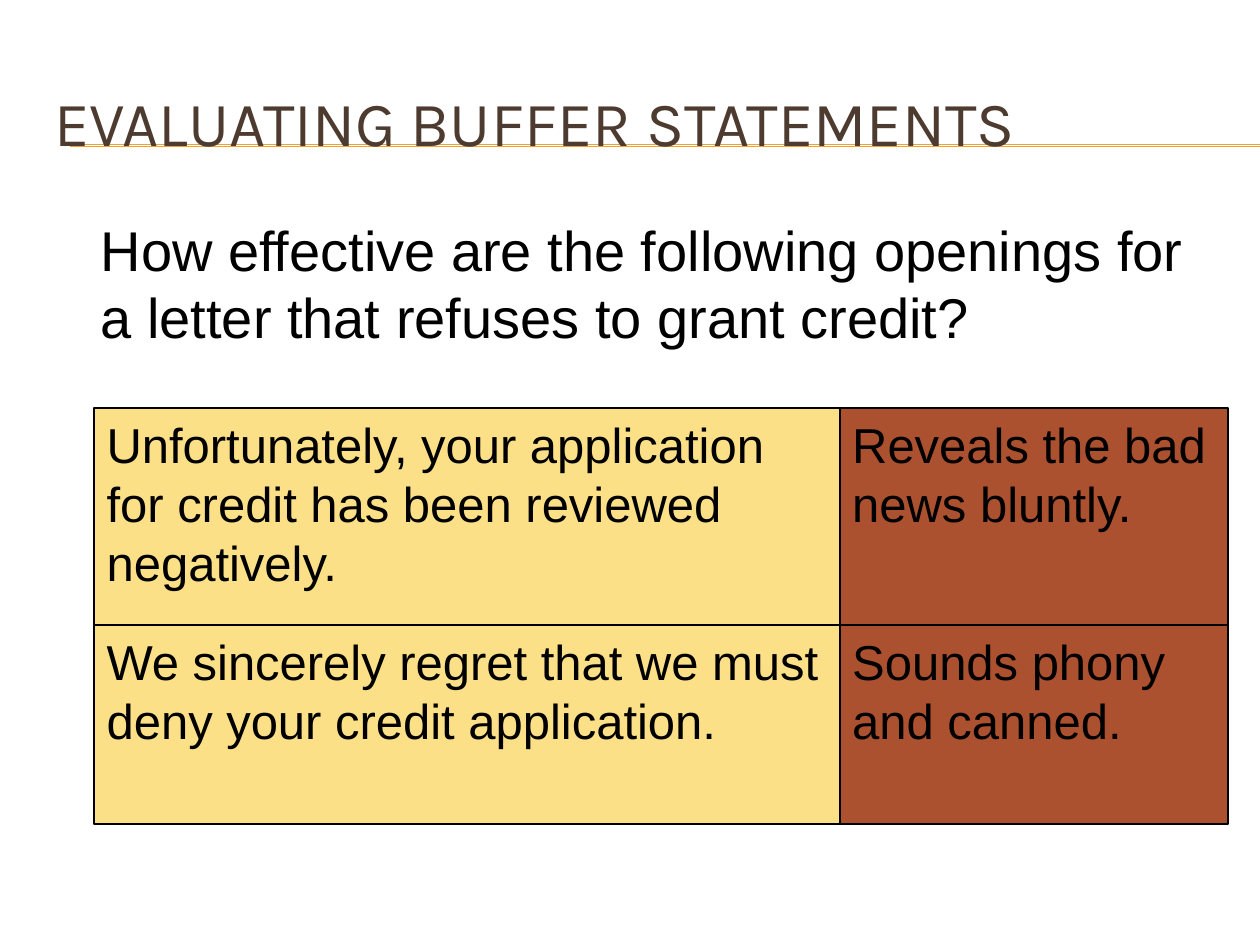
from pptx import Presentation
from pptx.dml.color import RGBColor
from pptx.enum.shapes import MSO_CONNECTOR as Connector, MSO_SHAPE as Shape
from pptx.enum.text import MSO_ANCHOR as Anchor, PP_ALIGN as Align
from pptx.oxml.ns import qn
from pptx.util import Cm, Pt
from lxml.etree import SubElement

TITLE = "EVALUATING BUFFER STATEMENTS"
QUESTION = "How effective are the following openings for a letter that refuses to grant credit?"
OPENINGS = [
    ("Unfortunately, your application for credit has been reviewed negatively.",
     "Reveals the bad news bluntly."),
    ("We sincerely regret that we must deny your credit application.",
     "Sounds phony and canned."),
]
GRID_LEFT, GRID_TOP = 1.9, 8.23
COLUMNS = [(15.03, "FCE088"), (7.82, "AC512F")]
ROW_HEIGHTS = [4.37, 4.01]
RULE_LEFT, RULE_RIGHT, RULE_TOPS = 1.42, 25.4, [2.92, 2.95]
TITLE_FONT = {"name": "Karla", "size": Pt(36), "color": "4E3B30"}
QUESTION_FONT = {"name": "Arial", "size": Pt(32), "color": "000000"}
CELL_FONT = {"name": "Arial", "size": Pt(28), "color": "000000"}


def paint(target, color):
    """Give a fill, line or font colour a solid hex value."""
    target.rgb = RGBColor.from_string(color)


def write(shape, text, font_format, anchor=Anchor.TOP):
    """Put wrapped, left-aligned text into a shape."""
    frame = shape.text_frame
    frame.word_wrap = True
    frame.vertical_anchor = anchor
    paragraph = frame.paragraphs[0]
    paragraph.alignment = Align.LEFT
    run = paragraph.add_run()
    run.text = text
    for name, value in font_format.items():
        if name == "color":
            paint(run.font.color, value)
        else:
            setattr(run.font, name, value)


def add_rule(slide, top):
    """Draw one thin horizontal rule to the slide edge."""
    rule = slide.shapes.add_connector(
        Connector.STRAIGHT, Cm(RULE_LEFT), Cm(top), Cm(RULE_RIGHT), Cm(top))
    paint(rule.line.color, "F0A22E")
    rule.line.width = Pt(0.75)
    SubElement(rule._element.spPr, qn("a:effectLst"))


def add_text(slide, box, text, font_format, anchor=Anchor.TOP):
    """Add a text box at left, top, width and height."""
    shape = slide.shapes.add_textbox(*map(Cm, box))
    write(shape, text, font_format, anchor)


def add_cell(slide, box, text, color):
    """Add one outlined, filled rectangle of the grid."""
    cell = slide.shapes.add_shape(Shape.RECTANGLE, *map(Cm, box))
    cell.shadow.inherit = False
    cell.fill.solid()
    paint(cell.fill.fore_color, color)
    paint(cell.line.color, "000000")
    cell.line.width = Pt(1.25)
    write(cell, text, CELL_FONT)


def main():
    """Build and save the slide."""
    presentation = Presentation()
    presentation.slide_width, presentation.slide_height = Cm(25.4), Cm(19.05)
    slide = presentation.slides.add_slide(presentation.slide_layouts[6])
    for top in RULE_TOPS:
        add_rule(slide, top)
    add_text(slide, (1.78, 4.22, 22.89, 2.97), QUESTION, QUESTION_FONT)
    top = GRID_TOP
    for row, height in zip(OPENINGS, ROW_HEIGHTS):
        left = GRID_LEFT
        for text, (width, color) in zip(row, COLUMNS):
            add_cell(slide, (left, top, width, height), text, color)
            left += width
        top += height
    add_text(slide, (0.84, 1.27, 24.13, 2.34), TITLE, TITLE_FONT, Anchor.MIDDLE)
    presentation.save("out.pptx")


if __name__ == "__main__":
    main()
